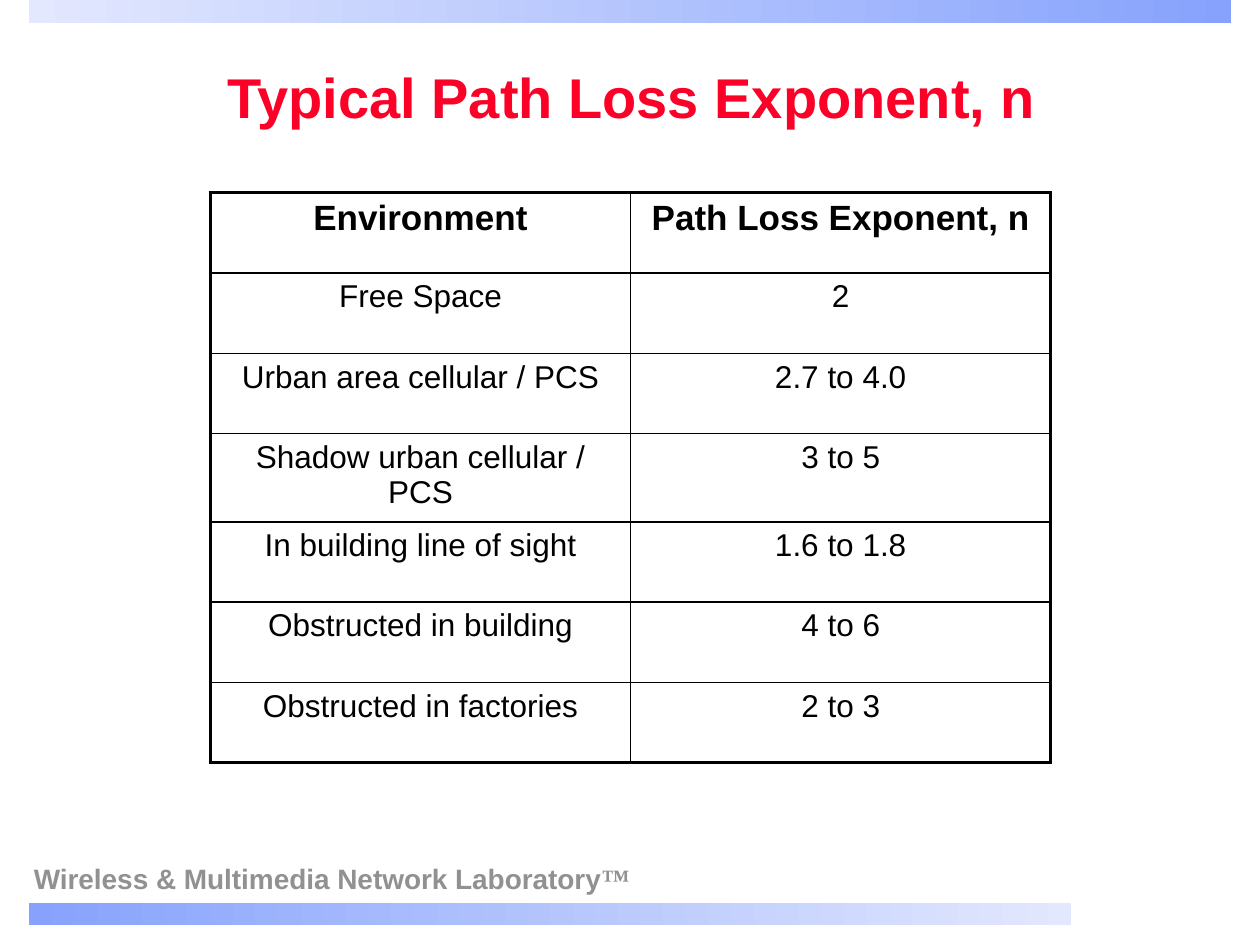
from lxml.etree import SubElement
from pptx import Presentation
from pptx.dml.color import RGBColor
from pptx.enum.shapes import MSO_SHAPE
from pptx.enum.text import MSO_ANCHOR, MSO_AUTO_SIZE, PP_ALIGN
from pptx.oxml.ns import qn
from pptx.util import Inches, Pt

BLACK, RED, GRAY = "000000", "FC0128", "919191"
PALE_BLUE, BLUE = "E3E8FE", "86A2FC"
THIN, THICK = 1, 2.25

PATH_LOSS = [
    ("Environment", "Path Loss Exponent, n"),
    ("Free Space", "2"),
    ("Urban area cellular / PCS", "2.7 to 4.0"),
    ("Shadow urban cellular / PCS", "3 to 5"),
    ("In building line of sight", "1.6 to 1.8"),
    ("Obstructed in building", "4 to 6"),
    ("Obstructed in factories", "2 to 3"),
]


def rgb(value):
    return RGBColor.from_string(value)


def add_run(paragraph, text, size, color, bold=False, font="Arial"):
    run = paragraph.add_run()
    run.text = text
    run.font.size = Pt(size)
    run.font.name = font
    run.font.bold = bold
    run.font.color.rgb = rgb(color)


def add_bar(slide, left, top, width, height, start, end):
    bar = slide.shapes.add_shape(
        MSO_SHAPE.RECTANGLE, Inches(left), Inches(top), Inches(width), Inches(height))
    bar.shadow.inherit = False
    bar.line.fill.background()
    bar.fill.gradient()
    bar.fill.gradient_angle = 0
    for stop, color in zip(bar.fill.gradient_stops, (start, end)):
        stop.color.rgb = rgb(color)


def add_lab_name(slide):
    lab = slide.shapes.add_textbox(Inches(0.17), Inches(6.82), Inches(5), Inches(0.34))
    paragraph = lab.text_frame.paragraphs[0]
    paragraph.line_spacing = 0.9
    add_run(paragraph, "Wireless & Multimedia Network Laboratory", 16, GRAY, True)
    add_run(paragraph, "™", 16, GRAY, True, "Times New Roman")


def fill_title(slide, text):
    title = slide.shapes.title
    title.left, title.top = Inches(0.62), Inches(0.42)
    title.width, title.height = Inches(8.79), Inches(0.75)
    frame = title.text_frame
    frame.auto_size = MSO_AUTO_SIZE.NONE
    frame.vertical_anchor = MSO_ANCHOR.MIDDLE
    paragraph = frame.paragraphs[0]
    paragraph.alignment = PP_ALIGN.CENTER
    paragraph.line_spacing = 0.9
    add_run(paragraph, text, 32, RED, True)


def set_borders(cell, outer_sides):
    properties = cell._tc.get_or_add_tcPr()
    for side, is_outer in zip("LRTB", outer_sides):
        width = Pt(THICK if is_outer else THIN)
        border = SubElement(properties, qn(f"a:ln{side}"), w=str(width))
        fill = SubElement(border, qn("a:solidFill"))
        SubElement(fill, qn("a:srgbClr"), val=BLACK)


def add_path_loss_table(slide, rows):
    last_row, last_column = len(rows) - 1, len(rows[0]) - 1
    table = slide.shapes.add_table(
        len(rows), len(rows[0]),
        Inches(1.67), Inches(1.53), Inches(6.67), Inches(4.46)).table
    table.first_row = table.horz_banding = False
    for r, values in enumerate(rows):
        is_header = r == 0
        for c, value in enumerate(values):
            cell = table.cell(r, c)
            set_borders(cell, (c == 0, c == last_column, is_header, r == last_row))
            cell.fill.background()
            paragraph = cell.text_frame.paragraphs[0]
            paragraph.alignment = PP_ALIGN.CENTER
            add_run(paragraph, value, 20 if is_header else 18, BLACK, is_header)


def main():
    presentation = Presentation()
    presentation.slide_width, presentation.slide_height = Inches(10), Inches(7.5)
    slide = presentation.slides.add_slide(presentation.slide_layouts[5])
    add_bar(slide, 0.23, 7.17, 8.27, 0.17, BLUE, PALE_BLUE)
    add_bar(slide, 0.23, 0, 9.54, 0.18, PALE_BLUE, BLUE)
    add_lab_name(slide)
    fill_title(slide, "Typical Path Loss Exponent, n")
    add_path_loss_table(slide, PATH_LOSS)
    presentation.save("out.pptx")


if __name__ == "__main__":
    main()
